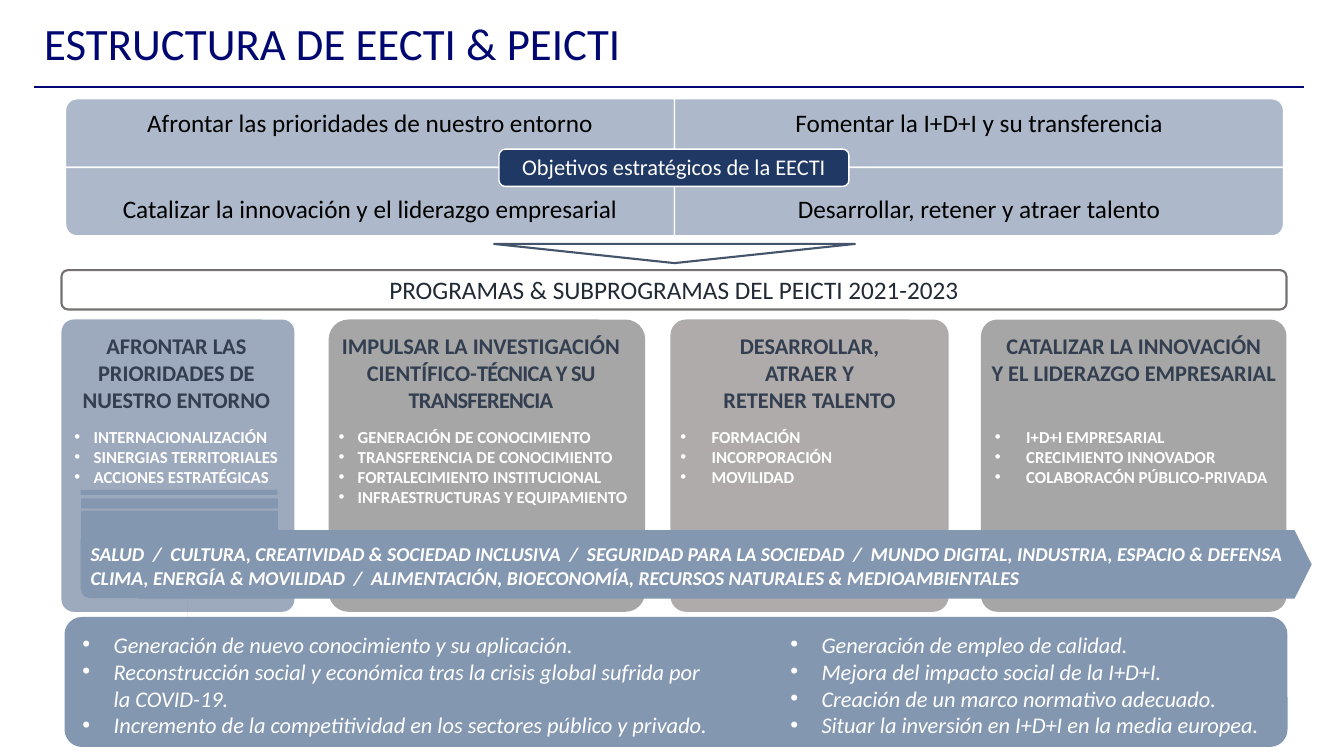
from copy import deepcopy

from lxml import etree
from pptx import Presentation
from pptx.dml.color import RGBColor
from pptx.enum.shapes import MSO_CONNECTOR, MSO_SHAPE
from pptx.enum.text import MSO_ANCHOR, MSO_AUTO_SIZE, PP_ALIGN
from pptx.oxml.ns import qn
from pptx.util import Emu, Pt

PX = 9144  # 100 px to the inch
ROUND, ONE_ROUND = MSO_SHAPE.ROUNDED_RECTANGLE, MSO_SHAPE.ROUND_1_RECTANGLE
PLATE, BENT, DOWN = MSO_SHAPE.PENTAGON, MSO_SHAPE.BENT_ARROW, MSO_SHAPE.DOWN_ARROW
LEFT, CENTER = PP_ALIGN.LEFT, PP_ALIGN.CENTER
TOP, MIDDLE = MSO_ANCHOR.TOP, MSO_ANCHOR.MIDDLE
GROW, FIXED = MSO_AUTO_SIZE.SHAPE_TO_FIT_TEXT, MSO_AUTO_SIZE.NONE

THEME = {
    "font": "Calibri",
    "title": "000771", "rule": "000773", "white": "FFFFFF", "black": "000000",
    "heading": "333F50", "programmes": "222A35", "programmes_edge": "767171",
    "objective": "ADB9CA", "objective_label": "203864", "arrow_edge": "44546A",
    "grey": "A6A6A6", "warm_grey": "AFABAB", "blue_grey": "9DA9BC", "steel": "8497B0",
    "title_size": 32, "lead_size": 18, "text_size": 16, "banner_size": 14, "list_size": 12,
}


def add_block(parent, kind, box, fill=None, edge=None, edge_width=1, adjust=(), turn=0):
    block = parent.add_shape(kind, *[Emu(v * PX) for v in box])
    block.shadow.inherit = False
    block.rotation = turn
    for index, value in enumerate(adjust):
        block.adjustments[index] = value
    for paint, colour in ((block.fill, fill), (block.line.fill, edge)):
        if colour:
            paint.solid()
            paint.fore_color.rgb = RGBColor.from_string(THEME[colour])
        else:
            paint.background()
    if edge:
        block.line.width = Pt(edge_width)
    return block


def add_text(parent, box, paragraphs, size, colour, align=LEFT, anchor=TOP, fit=GROW,
             inset=None, spacing=None, indent=0, **style):
    """A paragraph is a string, or a pair whose second part is set tighter."""
    frame = parent.add_textbox(*[Emu(v * PX) for v in box]).text_frame
    settings = {"word_wrap": True, "auto_size": fit, "vertical_anchor": anchor}
    if inset is not None:
        for side in ("left", "top", "right", "bottom"):
            settings["margin_" + side] = Emu(inset * PX)
    for name, value in settings.items():
        setattr(frame, name, value)
    font_format = {"name": THEME["font"], "size": Pt(THEME[size]), **style}
    for number, content in enumerate(paragraphs):
        paragraph = frame.add_paragraph() if number else frame.paragraphs[0]
        paragraph.alignment = align
        if spacing:
            paragraph.line_spacing = spacing
        if indent:
            properties = paragraph._p.get_or_add_pPr()
            properties.set("marL", str(indent * PX))
            properties.set("indent", str(-indent * PX))
            etree.SubElement(properties, qn("a:buFont")).set("typeface", "Arial")
            etree.SubElement(properties, qn("a:buChar")).set("char", "•")
        parts = [content] if isinstance(content, str) else content
        for tight, part in enumerate(parts):
            for row, line in enumerate(part.split("\n")):
                if row:
                    paragraph.add_line_break()
                run = paragraph.add_run()
                run.text = line
                for name, value in font_format.items():
                    setattr(run.font, name, value)
                run.font.color.rgb = RGBColor.from_string(THEME[colour])
                if tight:
                    run._r.get_or_add_rPr().set("spc", "-50")
        for line_break in paragraph._p.findall(qn("a:br")):
            line_break.append(deepcopy(paragraph.runs[0]._r.rPr))


deck = Presentation()
deck.slide_width, deck.slide_height = Emu(1333 * PX), Emu(750 * PX)
slide = deck.slides.add_slide(deck.slide_layouts[6])
shapes = slide.shapes

# Title and rule
rule = shapes.add_connector(MSO_CONNECTOR.STRAIGHT, *[Emu(v * PX) for v in (34, 86, 1293, 86)])
rule.line.color.rgb = RGBColor.from_string(THEME["rule"])
rule.line.width = Pt(1.5)
etree.SubElement(rule._element.spPr, qn("a:effectLst"))
add_text(shapes, (34, 11, 1048, 64), ["ESTRUCTURA DE EECTI & PEICTI"], "title_size", "title")

# Programme columns: card, heading, subprogrammes
columns = [
    (61, 231, "blue_grey", 0.053, 228, "AFRONTAR LAS\nPRIORIDADES DE\nNUESTRO ENTORNO", 64, 228, 19,
     ["INTERNACIONALIZACIÓN", "SINERGIAS TERRITORIALES", "ACCIONES ESTRATÉGICAS"]),
    (326, 314, "grey", 0.068, 302,
     ("IMPULSAR LA INVESTIGACIÓN CIENTÍFICO-", "TÉCNICA Y SU TRANSFERENCIA"), 326, 324, 19,
     ["GENERACIÓN DE CONOCIMIENTO", "TRANSFERENCIA DE CONOCIMIENTO",
      "FORTALECIMIENTO INSTITUCIONAL", "INFRAESTRUCTURAS Y EQUIPAMIENTO"]),
    (665, 276, "warm_grey", 0.056, 276, "DESARROLLAR,\nATRAER Y\nRETENER TALENTO", 665, 276, 31,
     ["FORMACIÓN", "INCORPORACIÓN", "MOVILIDAD"]),
    (973, 303, "grey", 0.056, 303, "CATALIZAR LA INNOVACIÓN\nY EL LIDERAZGO EMPRESARIAL", 977, 299, 31,
     ["I+D+I EMPRESARIAL", "CRECIMIENTO INNOVADOR", "COLABORACÓN PÚBLICO-PRIVADA"]),
]
for left, width, fill, corner, head_width, heading, list_left, list_width, indent, items in columns:
    add_block(shapes, ROUND, (left, 317, width, 290), fill, adjust=[corner])
    add_text(shapes, (left, 325, head_width, 91), [heading], "text_size", "heading", CENTER, bold=True)
    add_text(shapes, (list_left, 418, list_width, 11 + 20 * len(items)), items, "list_size", "white",
             indent=indent, bold=True)

# Strategic actions banner, fed from the first column
add_block(shapes, PLATE, (137, 526, 1164, 68), "steel", adjust=[0.251])
elbow = add_block(shapes, BENT, (80, 534, 106, 83), "steel", adjust=[0.431, 0.5, 0, 0.114], turn=180)
elbow._element.spPr.get_or_add_xfrm().set("flipH", "1")
for feeder in ((147, 440, 62, 195), (173, 402, 10, 195), (175, 391, 5, 195)):
    add_block(shapes, PLATE, feeder, "steel", adjust=[0], turn=270)
add_text(shapes, (80, 533, 1213, 57), [
    "SALUD  /  CULTURA, CREATIVIDAD & SOCIEDAD INCLUSIVA  /  SEGURIDAD PARA LA SOCIEDAD  /  "
    "MUNDO DIGITAL, INDUSTRIA, ESPACIO & DEFENSA",
    "CLIMA, ENERGÍA & MOVILIDAD  /  ALIMENTACIÓN, BIOECONOMÍA, RECURSOS NATURALES & MEDIOAMBIENTALES",
], "banner_size", "white", bold=True, italic=True)

# Programmes bar
programmes = (61, 268, 1215, 39)
add_block(shapes, ROUND, programmes, None, "programmes_edge", 1.5, [0.163])
add_text(shapes, programmes, ["PROGRAMAS & SUBPROGRAMAS DEL PEICTI 2021-2023"],
         "lead_size", "programmes", CENTER, MIDDLE, FIXED)

# Strategic objectives: four quadrants, each with its outer corner rounded
objectives = shapes.add_group_shape().shapes
quadrants = [
    (65, 98, 98, 270, "Afrontar las prioridades de nuestro entorno"),
    (669, 98, 98, 0, "Fomentar la I+D+I y su transferencia"),
    (65, 166, 183, 180, "Catalizar la innovación y el liderazgo empresarial"),
    (669, 166, 183, 90, "Desarrollar, retener y atraer talento"),
]
for left, top, text_top, turn, objective in quadrants:
    box = (left, top, 604, 68)
    if turn in (90, 270):
        box = (left + 268, top - 268, 68, 604)
    add_block(objectives, ONE_ROUND, box, "objective", "white", turn=turn)
    add_text(objectives, (left, text_top, 604, 51), [objective], "lead_size", "black",
             CENTER, MIDDLE, FIXED, inset=14, spacing=0.9)
add_block(objectives, ROUND, (495, 148, 347, 37), "objective_label", "white")
add_text(objectives, (497, 150, 343, 33), ["Objetivos estratégicos de la EECTI"], "text_size", "white",
         CENTER, MIDDLE, FIXED, inset=7, spacing=0.9)
add_block(shapes, DOWN, (490, 242, 358, 19), None, "arrow_edge", 1.5, [0.64, 1])

# Expected results
add_block(shapes, ROUND, (64, 612, 1213, 129), "steel", adjust=[0.134])
results = [
    (72, 644, ["Generación de nuevo conocimiento y su aplicación.",
               "Reconstrucción social y económica tras la crisis global sufrida por\nla COVID-19.",
               "Incremento de la competitividad en los sectores público y privado."]),
    (774, 496, ["Generación de empleo de calidad.", "Mejora del impacto social de la I+D+I.",
                "Creación de un marco normativo adecuado.",
                "Situar la inversión en I+D+I en la media europea."]),
]
for left, width, items in results:
    add_text(shapes, (left, 621, width, 118), items, "text_size", "white", indent=31, italic=True)

deck.save("out.pptx")
